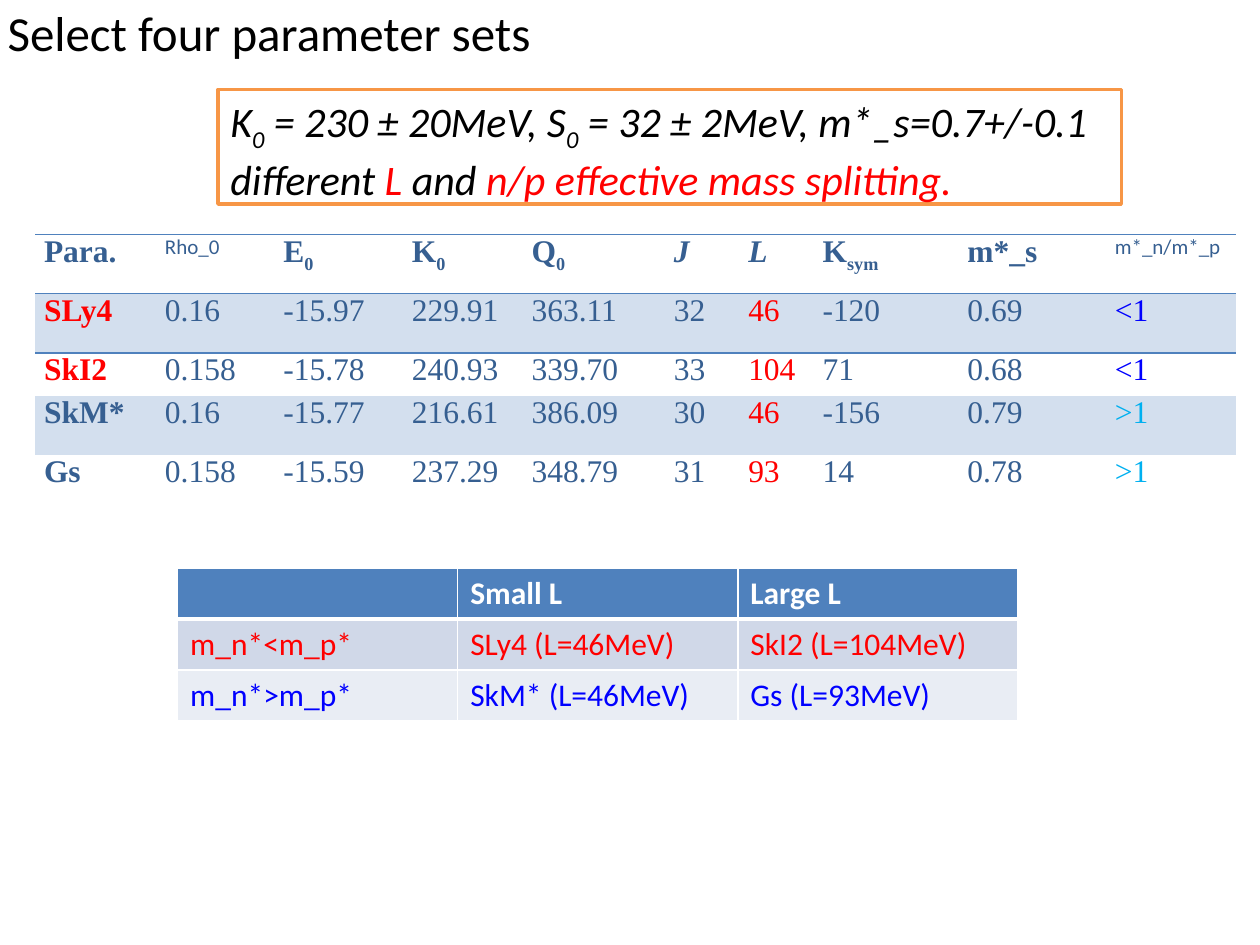
"""Build a slide that selects four parameter sets by slope L and effective mass splitting."""
from dataclasses import dataclass

from lxml.etree import SubElement
from pptx import Presentation
from pptx.dml.color import RGBColor
from pptx.enum.shapes import MSO_SHAPE
from pptx.enum.text import MSO_ANCHOR, PP_ALIGN
from pptx.oxml.ns import qn
from pptx.util import Inches, Pt


@dataclass(frozen=True)
class Theme:
    sans: str = "Calibri"
    serif: str = "Times New Roman"
    title_size: int = 28
    criteria_size: int = 24
    table_size: int = 18
    small_size: int = 12
    black: str = "000000"
    white: str = "FFFFFF"
    navy: str = "365F91"
    red: str = "FF0000"
    blue: str = "0000FF"
    cyan: str = "00B0F0"
    accent: str = "4F81BD"
    orange: str = "F79646"
    band: str = "D3DFEE"
    band_dark: str = "D0D8E8"
    band_light: str = "E9EDF4"
    no_style: str = "{2D5ABB26-0587-4C30-8999-92F81FD0307C}"


THEME = Theme()
WIDTH, HEIGHT = Inches(10), Inches(7.5)

TITLE = "Select four parameter sets"
CRITERIA = [
    [("K", {}), ("0", {"sub": True}), (" = 230 ± 20MeV, S", {}), ("0", {"sub": True}),
     (" = 32 ± 2MeV, m*_s=0.7+/-0.1", {})],
    [("different ", {}), ("L ", {"color": THEME.red}), ("and ", {}),
     ("n/p effective mass splitting.", {"color": THEME.red})],
]

SMALL = {"size": THEME.small_size, "font": THEME.sans, "bold": False}
PARAMETER_HEADS = [
    ("Para.", "", {}), ("Rho_0", "", SMALL), ("E", "0", {}), ("K", "0", {}), ("Q", "0", {}),
    ("J", "", {"italic": True}), ("L", "", {"italic": True}), ("K", "sym", {}),
    ("m*_s", "", {}), ("m*_n/m*_p", "", SMALL),
]
PARAMETER_SETS = [
    ("SLy4", "0.16", "-15.97", "229.91", "363.11", "32", "46", "-120", "0.69", "<1"),
    ("SkI2", "0.158", "-15.78", "240.93", "339.70", "33", "104", "71", "0.68", "<1"),
    ("SkM*", "0.16", "-15.77", "216.61", "386.09", "30", "46", "-156", "0.79", ">1"),
    ("Gs", "0.158", "-15.59", "237.29", "348.79", "31", "93", "14", "0.78", ">1"),
]
SLOPE_COLUMN, SPLITTING_COLUMN = 6, 9
PARAMETER_COLUMNS = [9.6, 9.4, 10.2, 9.5, 11.3, 5.9, 5.9, 11.5, 11.7, 10.3]
PARAMETER_ROWS = [6.27, 6.27, 4.53, 6.27, 6.27]

CHOICES = [
    ("", "Small L", "Large L"),
    ("m_n*<m_p*", "SLy4 (L=46MeV)", "SkI2 (L=104MeV)"),
    ("m_n*>m_p*", "SkM* (L=46MeV)", "Gs (L=93MeV)"),
]
CHOICE_STYLES = [
    (THEME.accent, THEME.white, True),
    (THEME.band_dark, THEME.red, False),
    (THEME.band_light, THEME.blue, False),
]
CHOICE_COLUMNS = [22.23] * 3
CHOICE_ROWS = [5.41] * 3


def across(percent):
    return round(WIDTH * percent / 100)


def down(percent):
    return round(HEIGHT * percent / 100)


def area(left, top, width, height):
    return across(left), down(top), across(width), down(height)


def write(paragraph, text, *, size=THEME.table_size, font=THEME.sans, color=THEME.black,
          bold=False, italic=False, sub=False):
    run = paragraph.add_run()
    run.text = text
    run.font.size, run.font.name = Pt(size), font
    run.font.bold, run.font.italic = bold, italic
    run.font.color.rgb = RGBColor.from_string(color)
    if sub:
        run.font._element.set("baseline", "-25000")


def add_grid(slide, left, top, columns, rows):
    frame = slide.shapes.add_table(len(rows), len(columns),
                                   *area(left, top, sum(columns), sum(rows)))
    grid = frame.table
    grid._tbl.tblPr.find(qn("a:tableStyleId")).text = THEME.no_style
    for column, width in zip(grid.columns, columns):
        column.width = across(width)
    for row, height in zip(grid.rows, rows):
        row.height = down(height)
    return grid


def dress(cell, fill, color, **borders):
    properties = cell._tc.get_or_add_tcPr()
    for side in (side for side in "LRTB" if side in borders):
        line = SubElement(properties, qn(f"a:ln{side}"), w=str(Pt(borders[side])))
        SubElement(SubElement(line, qn("a:solidFill")), qn("a:srgbClr"), val=color)
    if fill:
        cell.fill.solid()
        cell.fill.fore_color.rgb = RGBColor.from_string(fill)
    else:
        cell.fill.background()


def value_format(row, column, text):
    color = THEME.navy
    if column == SLOPE_COLUMN or (column == 0 and row <= 2):
        color = THEME.red
    elif column == SPLITTING_COLUMN:
        color = THEME.blue if text == "<1" else THEME.cyan
    return {"color": color, "bold": column == 0}


def add_title(slide):
    title = slide.shapes.title
    title.left, title.top, title.width, title.height = area(-0.4, -0.4, 44, 7.6)
    title.text_frame.word_wrap = False
    title.text_frame.vertical_anchor = MSO_ANCHOR.TOP
    heading = title.text_frame.paragraphs[0]
    heading.alignment = PP_ALIGN.LEFT
    write(heading, TITLE, size=THEME.title_size)


def add_criteria(slide):
    criteria = slide.shapes.add_shape(MSO_SHAPE.RECTANGLE, *area(17.3, 9.47, 71.7, 12.13))
    criteria.shadow.inherit = False
    criteria.fill.solid()
    criteria.fill.fore_color.rgb = RGBColor.from_string(THEME.white)
    criteria.line.color.rgb = RGBColor.from_string(THEME.orange)
    criteria.line.width = Pt(2)
    body = criteria.text_frame
    body.word_wrap = False
    body.vertical_anchor = MSO_ANCHOR.TOP
    for index, runs in enumerate(CRITERIA):
        sentence = body.add_paragraph() if index else body.paragraphs[0]
        sentence.alignment = PP_ALIGN.LEFT
        for text, emphasis in runs:
            write(sentence, text, size=THEME.criteria_size, italic=True, **emphasis)


def add_parameters(slide):
    grid = add_grid(slide, 2.8, 24.8, PARAMETER_COLUMNS, PARAMETER_ROWS)
    base = {"font": THEME.serif, "color": THEME.navy, "bold": True}
    values = [[(text, "", value_format(row, column, text)) for column, text in enumerate(record)]
              for row, record in enumerate(PARAMETER_SETS, 1)]
    for row, entries in enumerate([PARAMETER_HEADS, *values]):
        borders = {0: {"T": 1, "B": 1}, 1: {"T": 1}}.get(row, {})
        for column, (text, subscript, emphasis) in enumerate(entries):
            cell = grid.cell(row, column)
            cell.margin_left = cell.margin_right = Inches(0.07)
            cell.margin_top = cell.margin_bottom = 0
            dress(cell, THEME.band if row % 2 else None, THEME.accent, **borders)
            paragraph = cell.text_frame.paragraphs[0]
            write(paragraph, text, **{**base, **emphasis})
            if subscript:
                write(paragraph, subscript, sub=True, **base)


def add_choices(slide):
    grid = add_grid(slide, 14.1, 60.1, CHOICE_COLUMNS, CHOICE_ROWS)
    for row, (labels, (fill, color, bold)) in enumerate(zip(CHOICES, CHOICE_STYLES)):
        for column, label in enumerate(labels):
            cell = grid.cell(row, column)
            dress(cell, fill, THEME.white, L=1, R=1, T=3 if row == 1 else 1, B=1 if row else 3)
            if label:
                write(cell.text_frame.paragraphs[0], label, color=color, bold=bold)


def main():
    deck = Presentation()
    deck.slide_width, deck.slide_height = WIDTH, HEIGHT
    slide = deck.slides.add_slide(deck.slide_layouts[5])
    for add_part in (add_title, add_parameters, add_choices, add_criteria):
        add_part(slide)
    deck.save("out.pptx")


if __name__ == "__main__":
    main()
